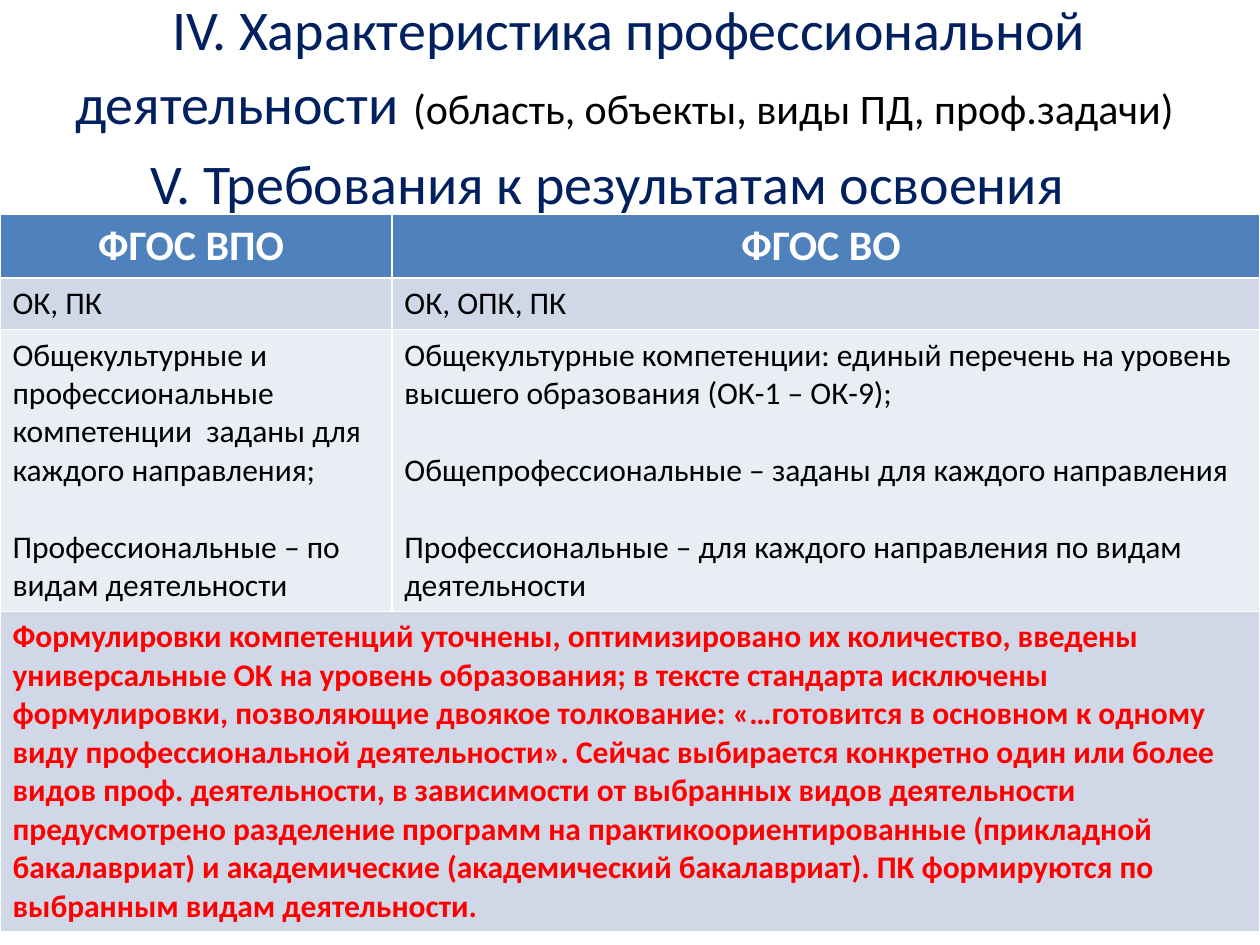
from pptx import Presentation
from pptx import util as u
from pptx.dml.color import RGBColor
from pptx.enum import text as t

NAVY = RGBColor(0x00, 0x20, 0x60)
BLACK = RGBColor(0, 0, 0)
WHITE = RGBColor(0xFF, 0xFF, 0xFF)
RED = RGBColor(0xFF, 0, 0)
BLUE = RGBColor(0x4F, 0x81, 0xBD)
BAND = RGBColor(0xD0, 0xD8, 0xE8)
PALE = RGBColor(0xE9, 0xED, 0xF4)
WIDE, HIGH = u.Inches(10), u.Inches(7.5)
LEFT, MID = t.PP_ALIGN.LEFT, t.PP_ALIGN.CENTER
COLS = (0.311, 0.689)  # shares of the slide's width
ROWS = (0.5, 0.41, 0.41, 0.41)  # least heights; rows grow with their text

HEAD = (["ФГОС ВПО "], ["ФГОС ВО "])
KINDS = (["ОК, ПК"], ["ОК, ОПК, ПК"])
SKILLS = (
    ["Общекультурные и профессиональные компетенции  заданы для каждого направления;",
     "Профессиональные – по видам деятельности"],
    ["Общекультурные компетенции: единый перечень на уровень высшего образования (ОК-1 – ОК-9);",
     "Общепрофессиональные – заданы для каждого направления",
     "Профессиональные – для каждого направления по видам деятельности"],
)
NOTE = (["Формулировки компетенций уточнены, оптимизировано их количество, введены "
         "универсальные ОК на уровень образования; в тексте стандарта исключены "
         "формулировки, позволяющие двоякое толкование: «…готовится в основном к одному "
         "виду профессиональной деятельности». Сейчас выбирается конкретно один или более "
         "видов проф. деятельности, в зависимости от выбранных видов деятельности "
         "предусмотрено разделение программ на практикоориентированные (прикладной "
         "бакалавриат) и академические (академический бакалавриат). ПК формируются по "
         "выбранным видам деятельности."],)


def write(para, words, size=18, color=BLACK, bold=False, align=LEFT):
    para.alignment = align
    run = para.add_run()
    run.text = words
    font = run.font
    font.name, font.size, font.bold = "Calibri", u.Pt(size), bold
    font.color.rgb = color


def place(shape, left, top, width, height):
    shape.left, shape.top = u.Inches(left), u.Inches(top)
    shape.width, shape.height = u.Inches(width), u.Inches(height)


def head(shape, anchor, *runs):
    """Write one centred line of (words, size, colour) runs."""
    frame = shape.text_frame
    frame.word_wrap = True
    frame.auto_size = t.MSO_AUTO_SIZE.NONE
    frame.vertical_anchor = anchor
    for words, size, color in runs:
        write(frame.paragraphs[0], words, size=size, color=color, align=MID)


def fill(row, texts, tint, **style):
    """Tint every cell of a row and write its paragraphs a line apart."""
    for cell in row.cells:
        cell.fill.solid()
        cell.fill.fore_color.rgb = tint
    for cell, lines in zip(row.cells, texts):
        frame = cell.text_frame
        for i, words in enumerate(lines):
            para = frame.add_paragraph() if i else frame.paragraphs[0]
            if i:
                para.space_before = u.Pt(22)
            write(para, words, **style)


def grid(slide):
    frame = slide.shapes.add_table(len(ROWS), len(COLS), 0, u.Inches(1.7),
                                   WIDE, u.Inches(sum(ROWS)))
    table = frame.table
    for col, share in zip(table.columns, COLS):
        col.width = int(WIDE * share)
    for row, high in zip(table.rows, ROWS):
        row.height = u.Inches(high)
    table.cell(3, 0).merge(table.cell(3, 1))
    rows = table.rows
    fill(rows[0], HEAD, BLUE, size=24, color=WHITE, bold=True, align=MID)
    fill(rows[1], KINDS, BAND)
    fill(rows[2], SKILLS, PALE)
    fill(rows[3], NOTE, BAND, color=RED, bold=True)
    frame.height = u.Inches(6.21)


def main():
    deck = Presentation()
    deck.slide_width, deck.slide_height = WIDE, HIGH
    slide = deck.slides.add_slide(deck.slide_layouts[5])
    title = slide.shapes.title
    place(title, 0.27, 0.05, 9.45, 0.94)
    head(title, t.MSO_ANCHOR.MIDDLE,
         ("IV. Характеристика профессиональной деятельности", 32, NAVY),
         (" ", 36, NAVY),
         ("(область, объекты, виды ПД, проф.задачи) ", 24, BLACK))
    body = slide.shapes.add_textbox(0, 0, WIDE, HIGH)
    place(body, 0, 1.07, 9.76, 5.31)
    head(body, t.MSO_ANCHOR.TOP,
         ("V. Требования к результатам освоения", 32, NAVY),
         (" ", 36, NAVY))
    grid(slide)
    deck.save("out.pptx")


if __name__ == "__main__":
    main()
